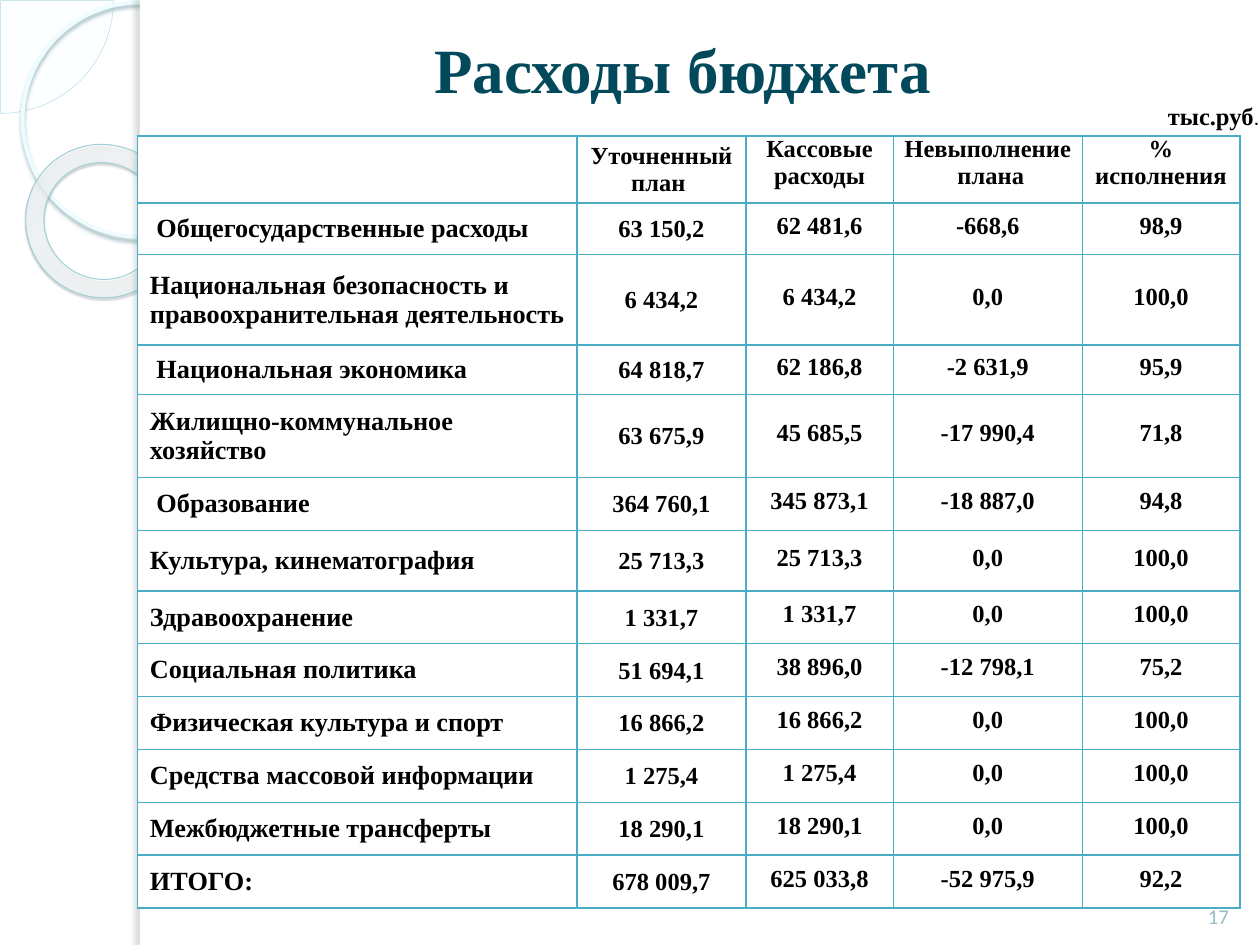
from lxml import etree
from pptx import Presentation
from pptx.dml.color import RGBColor
from pptx.enum.shapes import MSO_SHAPE
from pptx.enum.text import MSO_ANCHOR, PP_ALIGN
from pptx.oxml import parse_xml
from pptx.util import Inches, Pt

PIE, OVAL, DONUT, RECT = (MSO_SHAPE.PIE, MSO_SHAPE.OVAL, MSO_SHAPE.DONUT,
                          MSO_SHAPE.RECTANGLE)
TOP, MIDDLE, BOTTOM = MSO_ANCHOR.TOP, MSO_ANCHOR.MIDDLE, MSO_ANCHOR.BOTTOM
LEFT, CENTER = PP_ALIGN.LEFT, PP_ALIGN.CENTER

WHITE = RGBColor(0xFF, 0xFF, 0xFF)
BLACK = RGBColor(0, 0, 0)
TITLE_TEAL = RGBColor(0x03, 0x49, 0x5C)
NUMBER_TEAL = RGBColor(0x97, 0xBD, 0xC3)
BORDER_BLUE = RGBColor(0x4B, 0xAC, 0xC6)
PIE_FILL = RGBColor(0xF8, 0xFE, 0xFF)
PIE_LINE = RGBColor(0xAF, 0xDB, 0xE2)
RING_LINE = RGBColor(0xED, 0xFC, 0xFF)
RING_SHADOW = RGBColor(0x9C, 0xB9, 0xBE)
DONUT_LINE = RGBColor(0xA1, 0xCF, 0xD6)
DONUT_SHADOW = RGBColor(0x4B, 0x5E, 0x61)
EDGE_SHADOW = RGBColor(0x6C, 0x7A, 0x7C)
# Position, colour and opacity, in percent
DONUT_STOPS = [(0, RGBColor(0xF9, 0xFE, 0xFF), 70),
               (70, RGBColor(0xFD, 0xFF, 0xFF), 55),
               (100, RGBColor(0x9E, 0xF2, 0xFF), 60)]

SERIF = "Times New Roman"
NS = "http://schemas.openxmlformats.org/drawingml/2006/main"
COLUMN_WIDTHS = [3.49, 1.34, 1.17, 1.5, 1.25]
ROW_HEIGHTS = [0.53, 0.41, 0.72, 0.39, 0.66, 0.42, 0.48] + [0.42] * 6
HEADERS = ["", "Уточненный план ", "Кассовые расходы",
           "Невыполнение  плана", "% исполнения"]
EXPENSES = [
    (" Общегосударственные расходы", "63 150,2", "62 481,6", "-668,6", "98,9"),
    ("Национальная безопасность и правоохранительная деятельность",
     "6 434,2", "6 434,2", "0,0", "100,0"),
    (" Национальная экономика", "64 818,7", "62 186,8", "-2 631,9", "95,9"),
    ("Жилищно-коммунальное хозяйство",
     "63 675,9", "45 685,5", "-17 990,4", "71,8"),
    (" Образование", "364 760,1", "345 873,1", "-18 887,0", "94,8"),
    ("Культура, кинематография", "25 713,3", "25 713,3", "0,0", "100,0"),
    ("Здравоохранение", "1 331,7", "1 331,7", "0,0", "100,0"),
    ("Социальная политика", "51 694,1", "38 896,0", "-12 798,1", "75,2"),
    ("Физическая культура и спорт", "16 866,2", "16 866,2", "0,0", "100,0"),
    ("Средства массовой информации", "1 275,4", "1 275,4", "0,0", "100,0"),
    ("Межбюджетные трансферты", "18 290,1", "18 290,1", "0,0", "100,0"),
    ("ИТОГО:", "678 009,7", "625 033,8", "-52 975,9", "92,2"),
]
# Cell margins: left, top, right, bottom
NAME_MARGINS = (0.1, 0.05, 0.05, 0.05)
PLAN_HEADER_MARGINS = (0.1, 0.05, 0.1, 0.01)
HEADER_MARGINS = (0.08, 0, 0.08, 0)
PLAN_MARGINS = (0.07, 0.01, 0.07, 0)
VALUE_MARGINS = (0.1, 0.01, 0.1, 0.05)


def style_run(run, size, color, font=SERIF, bold=False):
    run.font.name, run.font.size, run.font.bold = font, Pt(size), bold
    run.font.color.rgb = color


def set_alpha(parent, percent):
    for color in parent.iter(f"{{{NS}}}srgbClr"):
        etree.SubElement(color, f"{{{NS}}}alpha", val=str(percent * 1000))


def add_shadow(shape, color, alpha, blur, distance, angle):
    effects = parse_xml(
        f'<a:effectLst xmlns:a="{NS}"><a:outerShdw blurRad="{Pt(blur)}" '
        f'dist="{Pt(distance)}" dir="{angle * 60000}" algn="tl" '
        f'rotWithShape="0"><a:srgbClr val="{color}"/></a:outerShdw>'
        '</a:effectLst>')
    set_alpha(effects, alpha)
    properties = shape._element.spPr
    properties.replace(properties.find(f"{{{NS}}}effectLst"), effects)


def add_plain_shape(slide, kind, box, fill=None, line=None, width=0):
    shape = slide.shapes.add_shape(kind, *map(Inches, box))
    shape.shadow.inherit = False
    if fill is None:
        shape.fill.background()
    else:
        shape.fill.solid()
        shape.fill.fore_color.rgb = fill
    if line is None:
        shape.line.fill.background()
    else:
        shape.line.color.rgb = line
        shape.line.width = Pt(width)
    return shape


def fill_donut(donut):
    stops = "".join(f'<a:gs pos="{pos * 1000}"><a:srgbClr val="{color}">'
                    f'<a:alpha val="{alpha * 1000}"/></a:srgbClr></a:gs>'
                    for pos, color, alpha in DONUT_STOPS)
    gradient = parse_xml(
        f'<a:gradFill xmlns:a="{NS}" rotWithShape="1"><a:gsLst>{stops}</a:gsLst>'
        '<a:path path="circle"><a:fillToRect l="-408000" t="-50000" '
        'r="508000" b="150000"/></a:path></a:gradFill>')
    properties = donut._element.spPr
    properties.replace(properties.find(f"{{{NS}}}noFill"), gradient)


def add_side_decoration(slide, panel_left, height):
    # Quarter circle in the corner
    corner = add_plain_shape(slide, PIE, (-0.89, -0.89, 1.79, 1.79),
                             PIE_FILL, PIE_LINE, 0.25)
    corner.adjustments[0], corner.adjustments[1] = 0, 54.02
    set_alpha(corner._element.spPr.find(f"{{{NS}}}solidFill"), 33)
    # Thin ring and donut
    ring = add_plain_shape(slide, OVAL, (0.18, 0.02, 1.86, 1.86),
                           line=RING_LINE, width=2.15)
    add_shadow(ring, RING_SHADOW, 85, 2, 2, 90)
    donut = add_plain_shape(slide, DONUT, (0.2, 1.15, 1.23, 1.21),
                            line=DONUT_LINE, width=0.58)
    donut.adjustments[0], donut.rotation = 0.12, 38.6
    fill_donut(donut)
    add_shadow(donut, DONUT_SHADOW, 35, 1, 1.2, 75)
    # Content panel and its shaded edge
    add_plain_shape(slide, RECT, (panel_left, 0, 10 - panel_left, height), WHITE)
    edge = add_plain_shape(slide, RECT, (panel_left, 0, 0.08, height), WHITE)
    add_shadow(edge, EDGE_SHADOW, 25, 3, 3, 180)


def add_label(slide, box, text, size, color, font=SERIF, bold=False,
              align=CENTER, anchor=TOP, wrap=True):
    frame = slide.shapes.add_textbox(*map(Inches, box)).text_frame
    frame.word_wrap, frame.vertical_anchor = wrap, anchor
    frame.text = text
    paragraph = frame.paragraphs[0]
    paragraph.alignment = align
    style_run(paragraph.runs[0], size, color, font, bold)
    return paragraph


def format_cell(cell, text, size, align, anchor, margins):
    properties = cell._tc.get_or_add_tcPr()
    for side in "LRTB":
        properties.append(parse_xml(
            f'<a:ln{side} xmlns:a="{NS}" w="{Pt(1)}"><a:solidFill>'
            f'<a:srgbClr val="{BORDER_BLUE}"/></a:solidFill></a:ln{side}>'))
    cell.fill.solid()
    cell.fill.fore_color.rgb = WHITE
    (cell.margin_left, cell.margin_top,
     cell.margin_right, cell.margin_bottom) = map(Inches, margins)
    cell.vertical_anchor = anchor
    cell.text = text
    paragraph = cell.text_frame.paragraphs[0]
    paragraph.alignment = align
    paragraph.font.size = Pt(size)
    for run in paragraph.runs:
        style_run(run, size, BLACK, bold=True)


def add_expense_table(slide, left, top):
    table = slide.shapes.add_table(
        len(ROW_HEIGHTS), len(COLUMN_WIDTHS), Inches(left), Inches(top),
        Inches(sum(COLUMN_WIDTHS)), Inches(sum(ROW_HEIGHTS))).table
    table.first_row = table.horz_banding = False
    for column, width in zip(table.columns, COLUMN_WIDTHS):
        column.width = Inches(width)
    for row, height in zip(table.rows, ROW_HEIGHTS):
        row.height = Inches(height)
    for c, header in enumerate(HEADERS):
        margins = PLAN_HEADER_MARGINS if c < 2 else HEADER_MARGINS
        format_cell(table.cell(0, c), header, 14, CENTER, TOP, margins)
    body_margins = [NAME_MARGINS, PLAN_MARGINS] + [VALUE_MARGINS] * 3
    for r, expense in enumerate(EXPENSES, start=1):
        for c, (text, margins) in enumerate(zip(expense, body_margins)):
            size, align = (14, CENTER) if c else (15, LEFT)
            format_cell(table.cell(r, c), text, size, align, MIDDLE, margins)


def main():
    deck = Presentation()
    deck.slide_width, deck.slide_height = Inches(10), Inches(7.5)
    slide = deck.slides.add_slide(deck.slide_layouts[6])
    add_side_decoration(slide, 1.11, 7.5)
    add_label(slide, (1.34, 0.25, 8.16, 0.58), "Расходы бюджета", 36,
              TITLE_TEAL, bold=True, anchor=MIDDLE)
    add_expense_table(slide, 1.09, 1.08)
    # Unit of measure, with a lighter full stop
    unit = add_label(slide, (9.17, 0.75, 0.93, 0.34), "тыс.руб", 14, BLACK,
                     bold=True, align=LEFT, wrap=False)
    full_stop = unit.add_run()
    full_stop.text = "."
    style_run(full_stop, 12, BLACK, "Arial")
    # Slide number
    add_label(slide, (9.42, 6.9, 0.5, 0.52), "17", 12, NUMBER_TEAL, "Calibri",
              anchor=BOTTOM)
    deck.save("out.pptx")


if __name__ == "__main__":
    main()
